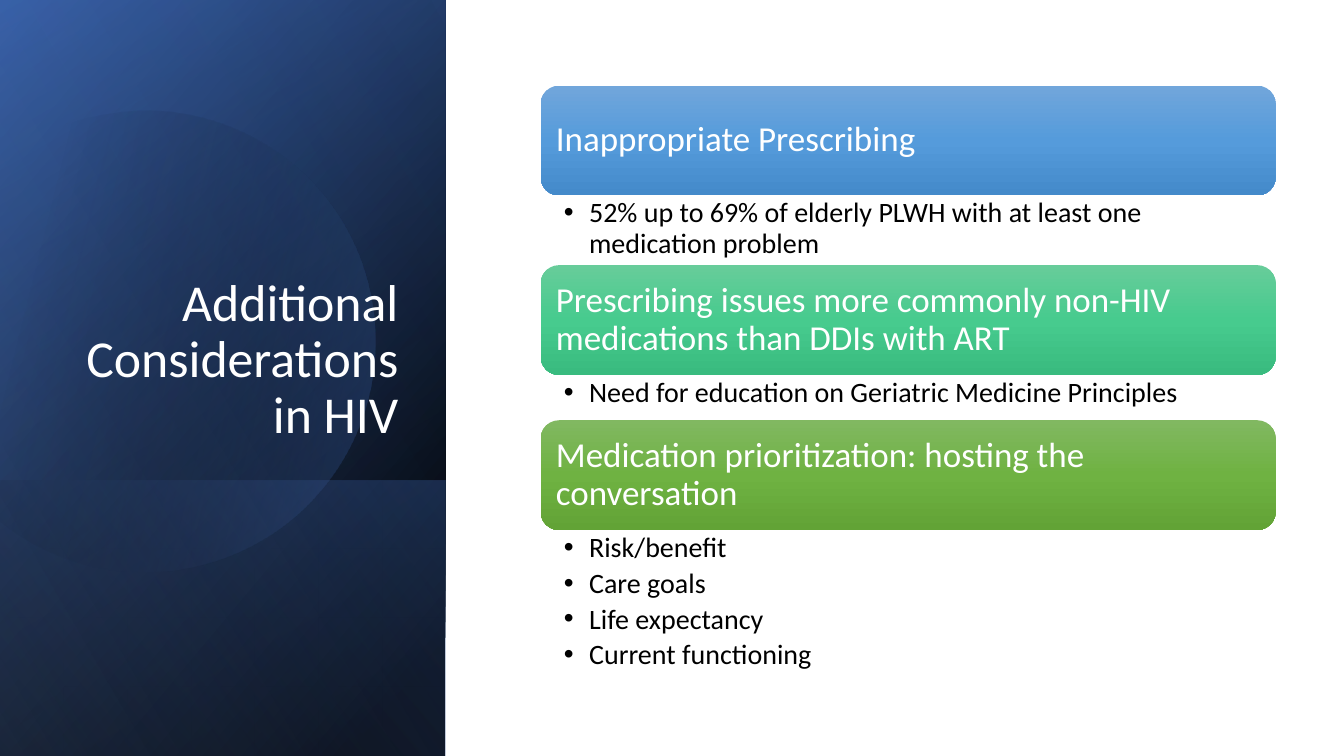
import math
from lxml import etree
from pptx import Presentation
from pptx.dml.color import RGBColor
from pptx.enum import shapes, text
from pptx.oxml import ns
from pptx.util import Pt

WHITE = RGBColor(0xFF, 0xFF, 0xFF)
BLACK = RGBColor(0x00, 0x00, 0x00)
NAVY = RGBColor(0x2F, 0x55, 0x97)
BLUE = RGBColor(0x44, 0x72, 0xC4)
PALE_BLUE = RGBColor(0x8F, 0xAA, 0xDC)
SKY = [RGBColor(0x71, 0xA6, 0xDB), RGBColor(0x55, 0x9B, 0xDB), RGBColor(0x44, 0x8A, 0xCA)]
MINT = [RGBColor(0x67, 0xCC, 0x9A), RGBColor(0x47, 0xCB, 0x8E), RGBColor(0x39, 0xBB, 0x7F)]
GREEN = [RGBColor(0x81, 0xB8, 0x61), RGBColor(0x6F, 0xB2, 0x42), RGBColor(0x62, 0xA3, 0x36)]

FONT = "Calibri"
WIDTH, HEIGHT = 960, 540
PANEL_WIDTH = 318.2
HEAD_HEIGHT = 78.4

SECTIONS = [
    ("Inappropriate Prescribing", SKY, 49.8,
     ["52% up to 69% of elderly PLWH with at least one medication problem"]),
    ("Prescribing issues more commonly non-HIV medications than DDIs with ART", MINT, 32.4,
     ["Need for education on Geriatric Medicine Principles"]),
    ("Medication prioritization: hosting the conversation", GREEN, 108,
     ["Risk/benefit", "Care goals", "Life expectancy", "Current functioning"]),
]

DISC_ROTATION = 343.9
DISC_CENTER = (114.1, 240.85)
DISC_START = (107.3, 79.2)
DISC_SEGMENTS = [
    [(177.1, 80.6), (241.2, 127.4), (261.4, 198)],
    [(286.6, 285.8), (236.2, 376.6), (149, 401.8)],
    [(94.3, 417.6), (38.2, 403.9), (-2.2, 370.1)],
    [(-10.8, 362.2)],
    [(-10.8, 126)],
    [(0, 115.9)],
    [(16.6, 102.2), (36, 92.2), (57.6, 85.7)],
    [(74.2, 81.4), (90.7, 79.2), DISC_START],
]


def paint_gradient(shape, stops, angle):
    shape.shadow.inherit = False
    shape.line.fill.background()
    shape.fill.gradient()
    gradient = shape._element.spPr.find(ns.qn("a:gradFill"))
    for child in list(gradient):
        gradient.remove(child)
    stop_list = etree.SubElement(gradient, ns.qn("a:gsLst"))
    for position, color, opacity in stops:
        stop = etree.SubElement(stop_list, ns.qn("a:gs"), pos=str(position * 1000))
        tint = etree.SubElement(stop, ns.qn("a:srgbClr"), val=str(color))
        if opacity < 100:
            etree.SubElement(tint, ns.qn("a:alpha"), val=str(opacity * 1000))
    etree.SubElement(gradient, ns.qn("a:lin"), ang=str(angle * 60000), scaled="0")


def add_text(page, left, top, width, height, lines, size, color, align=text.PP_ALIGN.LEFT,
             anchor=text.MSO_ANCHOR.TOP, insets=(7.2, 3.6, 7.2, 3.6), after=0, bullet=False):
    box = page.shapes.add_textbox(Pt(left), Pt(top), Pt(width), Pt(height))
    frame = box.text_frame
    frame.word_wrap = True
    frame.vertical_anchor = anchor
    frame.margin_left, frame.margin_top, frame.margin_right, frame.margin_bottom = map(Pt, insets)
    for index, line in enumerate(lines):
        para = frame.add_paragraph() if index else frame.paragraphs[0]
        para.alignment = align
        para.line_spacing = 0.9
        para.space_after = Pt(after)
        if bullet:
            para.level = 1
            properties = para._p.get_or_add_pPr()
            properties.set("marL", str(Pt(18)))
            properties.set("indent", str(-Pt(18)))
            etree.SubElement(properties, ns.qn("a:buFont"), typeface="Arial")
            etree.SubElement(properties, ns.qn("a:buChar"), char="•")
        span = para.add_run()
        span.text = line
        span.font.name = FONT
        span.font.size = Pt(size)
        span.font.color.rgb = color


def add_turned_panel(page, left, top, width, height, stops, angle):
    panel = page.shapes.add_shape(
        shapes.MSO_SHAPE.RECTANGLE,
        Pt(left + (width - height) / 2), Pt(top + (height - width) / 2), Pt(height), Pt(width))
    panel.rotation = 90
    panel._element.spPr.find(ns.qn("a:xfrm")).set("flipH", "1")
    paint_gradient(panel, stops, angle)


def bend_segments(shape, segments):
    lines = list(shape._element.iter(ns.qn("a:lnTo")))
    for segment in segments:
        parts, lines = lines[:len(segment)], lines[len(segment):]
        if len(parts) == 3:
            curve = etree.Element(ns.qn("a:cubicBezTo"))
            parts[0].addprevious(curve)
            for part in parts:
                curve.append(part[0])
                part.getparent().remove(part)


def add_disc(page, left, top):
    turn = math.radians(360 - DISC_ROTATION)
    center_x, center_y = DISC_CENTER

    def unturn(point):
        dx, dy = point[0] - center_x, point[1] - center_y
        return (Pt(left + center_x + dx * math.cos(turn) - dy * math.sin(turn)),
                Pt(top + center_y + dx * math.sin(turn) + dy * math.cos(turn)))

    builder = page.shapes.build_freeform(*unturn(DISC_START))
    builder.add_line_segments([unturn(point) for segment in DISC_SEGMENTS for point in segment])
    disc = builder.convert_to_shape()
    bend_segments(disc, DISC_SEGMENTS)
    outline = disc._element.find(".//" + ns.qn("a:path"))
    if outline.find(ns.qn("a:close")) is None:
        etree.SubElement(outline, ns.qn("a:close"))
    disc.rotation = DISC_ROTATION
    paint_gradient(disc, [(29, BLACK, 0), (100, BLUE, 43)], 30)


def add_title_panel(page, left, top, width, height):
    band = 197
    add_turned_panel(page, left, top, width, height, [(8, BLACK, 100), (100, NAVY, 100)], 50)
    add_turned_panel(page, left, top, width, height, [(0, BLACK, 0), (99, BLUE, 46)], 30)
    add_turned_panel(page, left, top + height - band, width, band,
                     [(2, BLUE, 29), (100, BLACK, 30)], 130)
    add_disc(page, left, top)
    add_turned_panel(page, left, top, width, height, [(0, BLACK, 0), (99, PALE_BLUE, 11)], 120)
    add_text(page, left + 46.1, top + 132.5, 245.5, 188.6,
             ["Additional Considerations in HIV"], 37, WHITE,
             align=text.PP_ALIGN.RIGHT, anchor=text.MSO_ANCHOR.BOTTOM)


def add_sections(page, left, top, width):
    inset = 3.83
    for heading, colors, body_height, points in SECTIONS:
        head = page.shapes.add_shape(shapes.MSO_SHAPE.ROUNDED_RECTANGLE,
                                     Pt(left), Pt(top), Pt(width), Pt(HEAD_HEIGHT))
        paint_gradient(head, [(i * 50, color, 100) for i, color in enumerate(colors)], 90)
        add_text(page, left + inset, top + inset, width - 2 * inset, HEAD_HEIGHT - 2 * inset,
                 [heading], 25, WHITE, anchor=text.MSO_ANCHOR.MIDDLE, insets=(7.2, 7.2, 7.2, 7.2))
        top += HEAD_HEIGHT
        add_text(page, left, top, width, body_height, points, 20, BLACK,
                 insets=(16.6, 2.3, 13.7, 2.3), after=4, bullet=True)
        top += body_height


def main():
    deck = Presentation()
    deck.slide_width, deck.slide_height = Pt(WIDTH), Pt(HEIGHT)
    page = deck.slides.add_slide(deck.slide_layouts[6])
    add_title_panel(page, 0, 0, PANEL_WIDTH, HEIGHT)
    add_sections(page, 386.2, 61.2, 525)
    deck.save("out.pptx")


if __name__ == "__main__":
    main()
